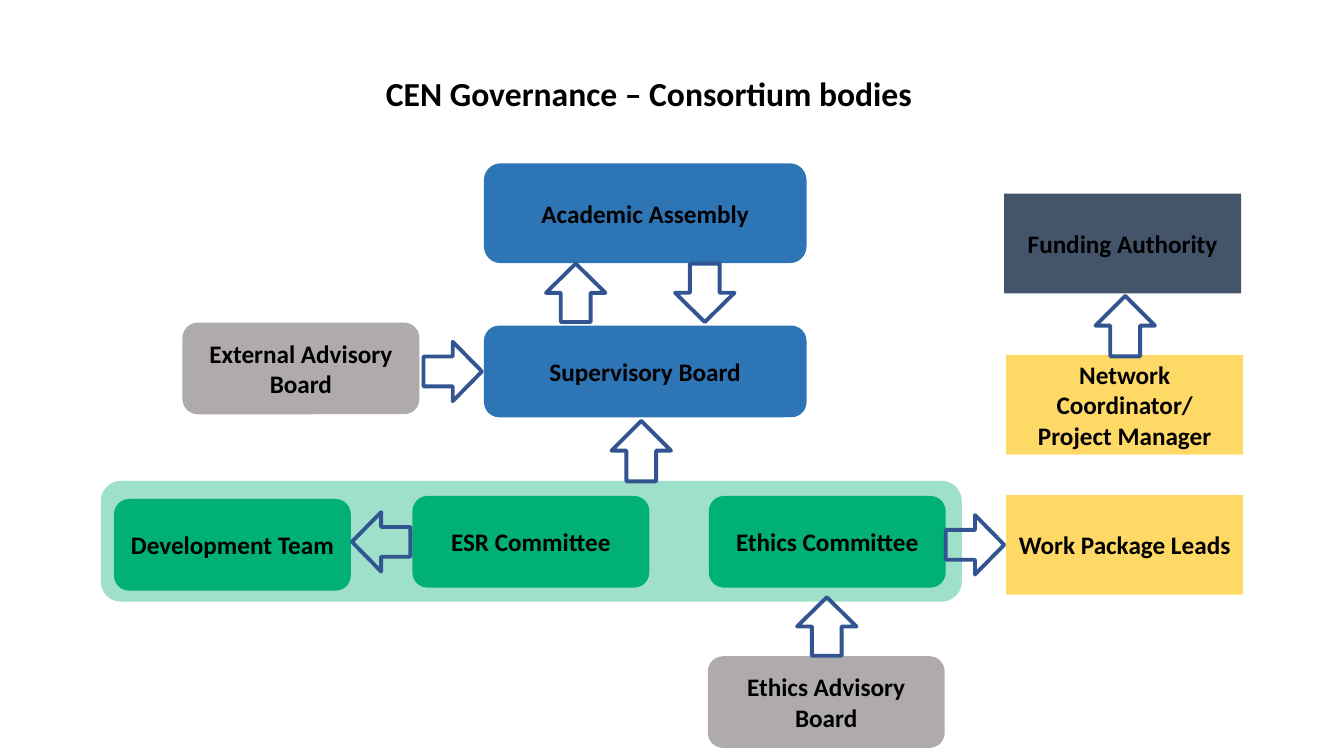
from lxml import etree
from pptx import Presentation
from pptx.dml.color import RGBColor
from pptx.enum.shapes import MSO_SHAPE
from pptx.enum.text import MSO_ANCHOR, PP_ALIGN
from pptx.oxml.ns import qn
from pptx.util import Pt

ROUND, RECT = MSO_SHAPE.ROUNDED_RECTANGLE, MSO_SHAPE.RECTANGLE
ARROW = MSO_SHAPE.RIGHT_ARROW
MIDDLE, CENTER = MSO_ANCHOR.MIDDLE, PP_ALIGN.CENTER
PX = 9144  # 100 px to the inch

THEME = {
    "font": "Calibri", "title_size": 24, "body_size": 18, "arrow_width": 2.75,
    "text": "000000", "arrow": "325491",
    "board": "2E75B6", "authority": "44546A", "management": "FFD966",
    "advisory": "AFABAB", "committee": "00B075", "band_opacity": 38,
}

# Content: text, left, top
TITLE = "CEN Governance – Consortium bodies"
TITLE_AT = (373, 67, 587, 50)
COMMITTEE_BAND = (100, 477, 854, 120)

# Each group: colour, outline, width, height, bodies
GROUPS = [
    ("board", ROUND, 320, 99, [("Academic Assembly", 480, 162)]),
    ("board", ROUND, 320, 91, [("Supervisory Board", 480, 323)]),
    ("authority", RECT, 235, 99, [("Funding Authority", 996, 192)]),
    ("management", RECT, 235, 99, [
        ("Network Coordinator/\nProject Manager", 998, 352),
        ("Work Package Leads", 998, 491)]),
    ("advisory", ROUND, 235, 91, [
        ("External Advisory Board", 181, 320),
        ("Ethics Advisory Board", 702, 651)]),
    ("committee", ROUND, 235, 91, [
        ("Ethics Committee", 703, 492),
        ("Development Team", 113, 495),
        ("ESR Committee", 409, 492)]),
]

# Arrows: direction, left, top, length
TURN = {"right": 0, "down": 90, "left": 180, "up": 270}
ARROW_HEIGHT = 59
ARROWS = [
    ("down", 670, 261, 58), ("up", 542, 261, 58), ("right", 420, 339, 58),
    ("left", 349, 508, 58), ("up", 606, 418, 60), ("right", 938, 511, 58),
    ("up", 1086, 294, 60), ("up", 791, 592, 58),
]

prs = Presentation()
prs.slide_width, prs.slide_height = 1333 * PX, 750 * PX
slide = prs.slides.add_slide(prs.slide_layouts[6])


def rgb(name):
    return RGBColor.from_string(THEME[name])


def px(*lengths):
    return [length * PX for length in lengths]


def write(frame, text, size, align=None):
    frame.word_wrap = True
    frame.text = text
    for paragraph in frame.paragraphs:
        paragraph.alignment = align
        font = paragraph.runs[0].font
        font_format = {"name": THEME["font"], "size": Pt(THEME[size]), "bold": True}
        for attribute, value in font_format.items():
            setattr(font, attribute, value)
        font.color.rgb = rgb("text")


def add_body(outline, box, colour):
    body = slide.shapes.add_shape(outline, *px(*box))
    body.shadow.inherit = False
    body.fill.solid()
    body.fill.fore_color.rgb = rgb(colour)
    body.line.fill.background()
    return body


# Translucent band behind the committees
band = add_body(ROUND, COMMITTEE_BAND, "committee")
band_colour = band.fill._xPr.find(qn("a:solidFill"))[0]
etree.SubElement(band_colour, qn("a:alpha"), val=str(THEME["band_opacity"] * 1000))

# Consortium bodies
for colour, outline, width, height, bodies in GROUPS:
    for text, left, top in bodies:
        body = add_body(outline, (left, top, width, height), colour)
        body.text_frame.vertical_anchor = MIDDLE
        write(body.text_frame, text, "body_size", CENTER)

# Reporting arrows
for direction, left, top, length in ARROWS:
    arrow = slide.shapes.add_shape(ARROW, *px(left, top, length, ARROW_HEIGHT))
    arrow.shadow.inherit = False
    arrow.rotation = TURN[direction]
    arrow.fill.background()
    arrow.line.color.rgb = rgb("arrow")
    arrow.line.width = Pt(THEME["arrow_width"])

# Title
title = slide.shapes.add_textbox(*px(*TITLE_AT))
write(title.text_frame, TITLE, "title_size")

prs.save("out.pptx")
